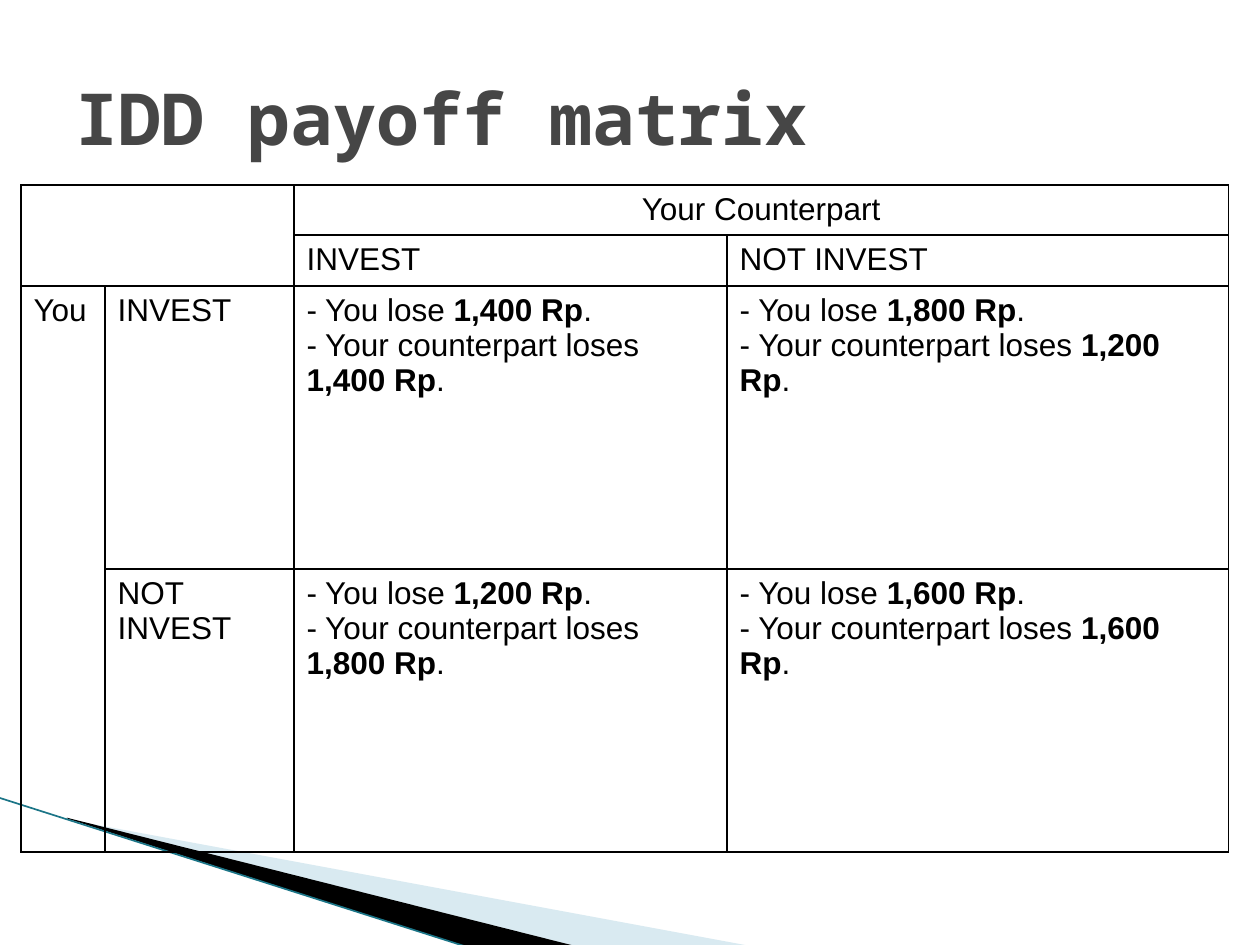
import pptx
import pptx.util
import pptx.dml.color
import pptx.enum.shapes
import pptx.enum.text
import pptx.oxml
import pptx.oxml.ns
import lxml.etree

Pt = pptx.util.Pt
qn = pptx.oxml.ns.qn
ALIGN = pptx.enum.text.PP_ALIGN


def color(value):
    return pptx.dml.color.RGBColor.from_string(value)


def add_run(paragraph, text, size, font, ink, bold=False):
    run = paragraph.add_run()
    run.text = text
    run.font.size = Pt(size)
    run.font.name = font
    run.font.bold = bold
    run.font.color.rgb = color(ink)


deck = pptx.Presentation()
deck.slide_width, deck.slide_height = Pt(720), Pt(540)
slide = deck.slides.add_slide(deck.slide_layouts[5])

wedges = [
    ([(39.6, 468.5), (428.4, 540.5), (328.3, 540.5), (39.6, 468)], "A0CBDC", 40),
    ([(38.2, 467.3), (329, 540.7), (267.8, 541.4), (38.9, 468)], "000000", 100),
]
for points, fill, opacity in wedges:
    outline = slide.shapes.build_freeform(Pt(points[0][0]), Pt(points[0][1]))
    outline.add_line_segments([(Pt(x), Pt(y)) for x, y in points[1:]])
    wedge = outline.convert_to_shape()
    wedge.shadow.inherit = False
    wedge.fill.solid()
    wedge.fill.fore_color.rgb = color(fill)
    wedge.line.fill.background()
    if opacity < 100:
        tint = wedge._element.spPr.find(".//" + qn("a:srgbClr"))
        lxml.etree.SubElement(tint, qn("a:alpha"), val=str(opacity * 1000))

edge = slide.shapes.add_connector(
    pptx.enum.shapes.MSO_CONNECTOR.STRAIGHT, Pt(-0.7), Pt(455.8), Pt(267.8), Pt(541.4))
edge.line.color.rgb = color("1B7587")
edge.line.width = Pt(0.95)
lxml.etree.SubElement(edge._element.spPr, qn("a:effectLst"))

title = slide.shapes.title
title.left, title.top, title.width, title.height = Pt(36), Pt(21.6), Pt(648), Pt(90)
title.text_frame.auto_size = pptx.enum.text.MSO_AUTO_SIZE.NONE
title.text_frame.vertical_anchor = pptx.enum.text.MSO_ANCHOR.MIDDLE
heading = title.text_frame.paragraphs[0]
heading.alignment = ALIGN.LEFT
add_run(heading, "IDD payoff matrix", 41, "Noto Sans Mono", "464646", True)

matrix = slide.shapes.add_table(4, 4, Pt(12), Pt(105.8), Pt(690), Pt(380.6)).table
matrix.first_row = False
matrix.horz_banding = False
for column, width in zip(matrix.columns, [48, 108, 247.5, 286.5]):
    column.width = Pt(width)
for row, height in zip(matrix.rows, [28.6, 28.6, 161.7, 161.7]):
    row.height = Pt(height)

for cell in matrix.iter_cells():
    properties = cell._tc.get_or_add_tcPr()
    for side in ("lnL", "lnR", "lnT", "lnB"):
        border = lxml.etree.SubElement(properties, qn("a:" + side), w=str(Pt(1)))
        paint = lxml.etree.SubElement(border, qn("a:solidFill"))
        lxml.etree.SubElement(paint, qn("a:srgbClr"), val="000000")
    cell.fill.background()

for first, last in [((0, 0), (1, 1)), ((0, 2), (0, 3)), ((2, 0), (3, 0))]:
    matrix.cell(*first).merge(matrix.cell(*last))

labels = {
    (0, 2): ["Your Counterpart"],
    (1, 2): ["INVEST"],
    (1, 3): ["NOT INVEST"],
    (2, 0): ["You"],
    (2, 1): ["INVEST"],
    (3, 1): ["NOT", "INVEST"],
}
for place, lines in labels.items():
    frame = matrix.cell(*place).text_frame
    for index, line in enumerate(lines):
        label = frame.add_paragraph() if index else frame.paragraphs[0]
        indent = label._p.get_or_add_pPr()
        indent.set("marL", str(Pt(27)))
        indent.set("indent", str(Pt(-27)))
        if place == (0, 2):
            label.alignment = ALIGN.CENTER
        add_run(label, line, 18, "Arial", "000000")

payoffs = {
    (2, 2): ("1,400 Rp", "1,400 Rp"),
    (2, 3): ("1,800 Rp", "1,200 Rp"),
    (3, 2): ("1,200 Rp", "1,800 Rp"),
    (3, 3): ("1,600 Rp", "1,600 Rp"),
}
for place, (own_loss, counterpart_loss) in payoffs.items():
    outcome = matrix.cell(*place).text_frame.paragraphs[0]
    add_run(outcome, "- You lose ", 18, "Arial", "000000")
    add_run(outcome, own_loss, 18, "Arial", "000000", True)
    add_run(outcome, ".", 18, "Arial", "000000")
    outcome.add_line_break()
    add_run(outcome, "- Your counterpart loses ", 18, "Arial", "000000")
    add_run(outcome, counterpart_loss, 18, "Arial", "000000", True)
    add_run(outcome, ".", 18, "Arial", "000000")

deck.save("out.pptx")
